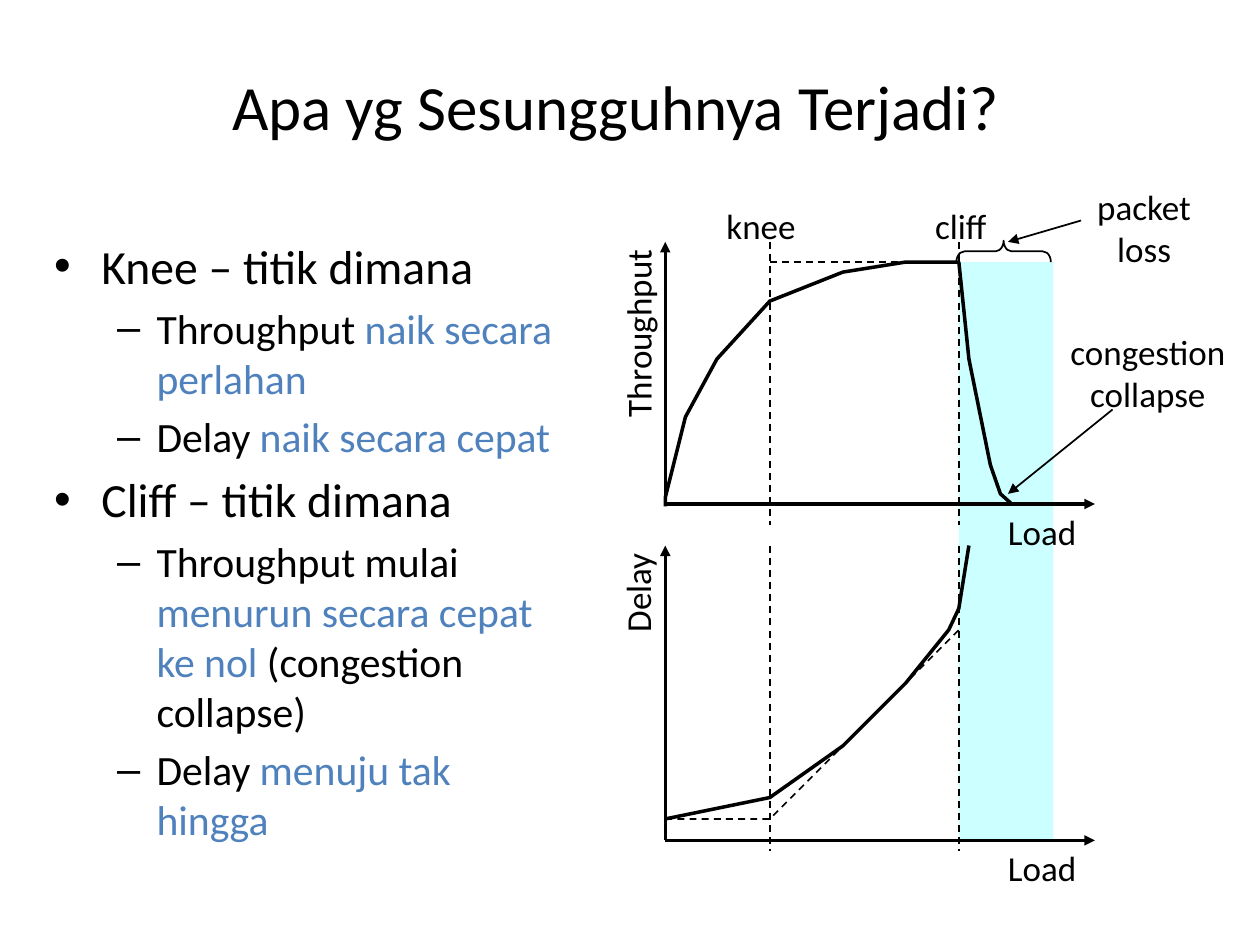
from dataclasses import dataclass

from lxml import etree
from pptx import Presentation
from pptx.dml.color import RGBColor
from pptx.enum.dml import MSO_LINE
from pptx.enum.shapes import MSO_CONNECTOR, MSO_SHAPE
from pptx.enum.text import MSO_ANCHOR, MSO_AUTO_SIZE, PP_ALIGN
from pptx.oxml.ns import qn
from pptx.util import Inches, Pt

BLACK = RGBColor(0x00, 0x00, 0x00)
BLUE = RGBColor(0x4F, 0x81, 0xBD)
PALE_CYAN = RGBColor(0xCC, 0xFF, 0xFF)
FONT = "Calibri"
DASH = MSO_LINE.DASH
STRAIGHT = MSO_CONNECTOR.STRAIGHT
CENTER = PP_ALIGN.CENTER
MIDDLE = MSO_ANCHOR.MIDDLE
NO_AUTOFIT = MSO_AUTO_SIZE.NONE
RECTANGLE = MSO_SHAPE.RECTANGLE
RIGHT_BRACE = MSO_SHAPE.RIGHT_BRACE

Point = tuple[float, float]

# Shared horizontal positions and the baselines of both graphs
ORIGIN_X, KNEE_X, CLIFF_X, AXIS_END_X = 5.28, 6.11, 7.61, 8.69
PEAK_Y, THROUGHPUT_BASE, DELAY_BASE = 2.08, 4.0, 6.67
DELAY_START = 6.5


@dataclass(frozen=True)
class Segment:
    start: Point
    end: Point
    width: float = 1
    dashed: bool = False
    arrow: bool = False


@dataclass(frozen=True)
class Curve:
    points: list[Point]
    width: float = 2
    dashed: bool = False


@dataclass(frozen=True)
class Label:
    lines: list[str]
    left: float
    top: float
    width: float
    height: float = 0.43
    rotation: int = 0


@dataclass(frozen=True)
class Bullet:
    level: int
    runs: list[tuple[str, RGBColor]]


def axes(top: float, base: float) -> list[Segment]:
    origin = (ORIGIN_X, base)
    return [Segment(origin, end, width=2, arrow=True)
            for end in ((ORIGIN_X, top), (AXIS_END_X, base))]


def guides(top: float, bottom: float) -> list[Segment]:
    """Dashed verticals at the knee and the cliff."""
    return [Segment((x, top), (x, bottom), dashed=True) for x in (KNEE_X, CLIFF_X)]


SEGMENTS = [
    *axes(1.92, THROUGHPUT_BASE),
    *guides(1.92, 4.17),
    *axes(4.33, DELAY_BASE),
    *guides(4.33, 6.75),
    Segment((KNEE_X, PEAK_Y), (CLIFF_X, PEAK_Y), dashed=True),
    Segment((8.83, 3.25), (8, 3.92), arrow=True),
    Segment((8.58, 1.75), (8, 1.92), arrow=True),
]

CURVES = [
    Curve([(ORIGIN_X, 4.02), (ORIGIN_X, 3.95), (5.44, 3.31), (5.69, 2.85),
           (KNEE_X, 2.39), (6.69, 2.16), (7.19, PEAK_Y), (CLIFF_X, PEAK_Y),
           (7.69, 2.85), (7.86, 3.69), (7.94, 3.92), (8.03, THROUGHPUT_BASE)]),
    Curve([(ORIGIN_X, DELAY_START), (KNEE_X, DELAY_START), (CLIFF_X, 5)],
          width=1, dashed=True),
    Curve([(ORIGIN_X, DELAY_START), (KNEE_X, 6.33), (6.69, 5.92), (7.19, 5.42),
           (7.53, 5), (CLIFF_X, 4.83), (7.69, 4.33)]),
]

LABELS = [
    Label(["Load"], 7.86, DELAY_BASE, 0.82),
    Label(["Load"], 7.86, THROUGHPUT_BASE, 0.82),
    Label(["Throughput"], 4.25, 2.43, 1.62, rotation=270),
    Label(["Delay"], 4.6, 4.49, 0.91, rotation=270),
    Label(["knee"], 5.64, 1.57, 0.8),
    Label(["cliff"], 7.32, 1.57, 0.61),
    Label(["congestion", "collapse"], 8.34, 2.57, 1.54, 0.76),
    Label(["packet", "loss"], 8.57, 1.42, 1.02, 0.76),
]

BULLETS = [
    Bullet(0, [("Knee – titik dimana", BLACK)]),
    Bullet(1, [("Throughput ", BLACK), ("naik secara perlahan", BLUE)]),
    Bullet(1, [("Delay ", BLACK), ("naik secara cepat", BLUE)]),
    Bullet(0, [("Cliff – titik dimana", BLACK)]),
    Bullet(1, [("Throughput mulai ", BLACK), ("menurun secara cepat ke nol", BLUE),
               (" (congestion collapse)", BLACK)]),
    Bullet(1, [("Delay ", BLACK), ("menuju tak hingga", BLUE)]),
]
BULLET_SIZES = (27.2, 23.8)


def place(shape, left: float, top: float, width: float, height: float) -> None:
    shape.left, shape.top = Inches(left), Inches(top)
    shape.width, shape.height = Inches(width), Inches(height)


def add_run(paragraph, text: str, size: float, color: RGBColor = BLACK) -> None:
    run = paragraph.add_run()
    run.text = text
    run.font.name, run.font.size = FONT, Pt(size)
    run.font.color.rgb = color


def style_line(line, width: float, dashed: bool = False) -> None:
    line.color.rgb = BLACK
    line.width = Pt(width)
    if dashed:
        line.dash_style = DASH


def draw_segment(shapes, segment: Segment) -> None:
    ends = [Inches(value) for value in (*segment.start, *segment.end)]
    connector = shapes.add_connector(STRAIGHT, *ends)
    style_line(connector.line, segment.width, segment.dashed)
    properties = connector._element.spPr
    if segment.arrow:
        etree.SubElement(properties.find(qn("a:ln")), qn("a:tailEnd"), type="triangle")
    etree.SubElement(properties, qn("a:effectLst"))


def draw_curve(shapes, curve: Curve) -> None:
    points = [(Inches(x), Inches(y)) for x, y in curve.points]
    builder = shapes.build_freeform(*points[0])
    builder.add_line_segments(points[1:], close=False)
    outline = builder.convert_to_shape()
    outline.shadow.inherit = False
    outline.fill.background()
    style_line(outline.line, curve.width, curve.dashed)


def draw_label(shapes, label: Label) -> None:
    box = shapes.add_textbox(*map(Inches, (label.left, label.top, label.width, label.height)))
    box.rotation = label.rotation
    frame = box.text_frame
    frame.word_wrap = False
    for index, line in enumerate(label.lines):
        paragraph = frame.add_paragraph() if index else frame.paragraphs[0]
        paragraph.alignment = CENTER
        add_run(paragraph, line, 20)


def add_preset(shapes, preset, left: float, top: float, width: float, height: float):
    shape = shapes.add_shape(preset, *map(Inches, (left, top, width, height)))
    shape.shadow.inherit = False
    return shape


def fill_title(title) -> None:
    place(title, 0.58, 0.33, 8.75, 0.92)
    title.text_frame.vertical_anchor = MIDDLE
    paragraph = title.text_frame.paragraphs[0]
    paragraph.alignment = CENTER
    add_run(paragraph, "Apa yg Sesungguhnya Terjadi?", 36)
    add_run(paragraph, " ", 44)


def fill_body(body) -> None:
    place(body, 0.33, 1.83, 4.25, 4.75)
    frame = body.text_frame
    frame.auto_size = NO_AUTOFIT
    for index, bullet in enumerate(BULLETS):
        paragraph = frame.add_paragraph() if index else frame.paragraphs[0]
        paragraph.level = bullet.level
        for text, color in bullet.runs:
            add_run(paragraph, text, BULLET_SIZES[bullet.level], color)


def main() -> None:
    deck = Presentation()
    deck.slide_width, deck.slide_height = Inches(10), Inches(7.5)
    slide = deck.slides.add_slide(deck.slide_layouts[1])
    shapes = slide.shapes
    fill_title(shapes.title)
    fill_body(slide.placeholders[1])

    collapse_zone = add_preset(shapes, RECTANGLE, CLIFF_X, PEAK_Y, 0.75, DELAY_BASE - PEAK_Y)
    collapse_zone.fill.solid()
    collapse_zone.fill.fore_color.rgb = PALE_CYAN
    collapse_zone.line.fill.background()

    for segment in SEGMENTS:
        draw_segment(shapes, segment)
    for curve in CURVES:
        draw_curve(shapes, curve)
    for label in LABELS:
        draw_label(shapes, label)

    loss_brace = add_preset(shapes, RIGHT_BRACE, 7.88, 1.62, 0.17, 0.75)
    loss_brace.rotation = 270
    loss_brace.adjustments[0] = 0.375
    loss_brace.fill.background()
    style_line(loss_brace.line, 1)
    deck.save("out.pptx")


if __name__ == "__main__":
    main()
